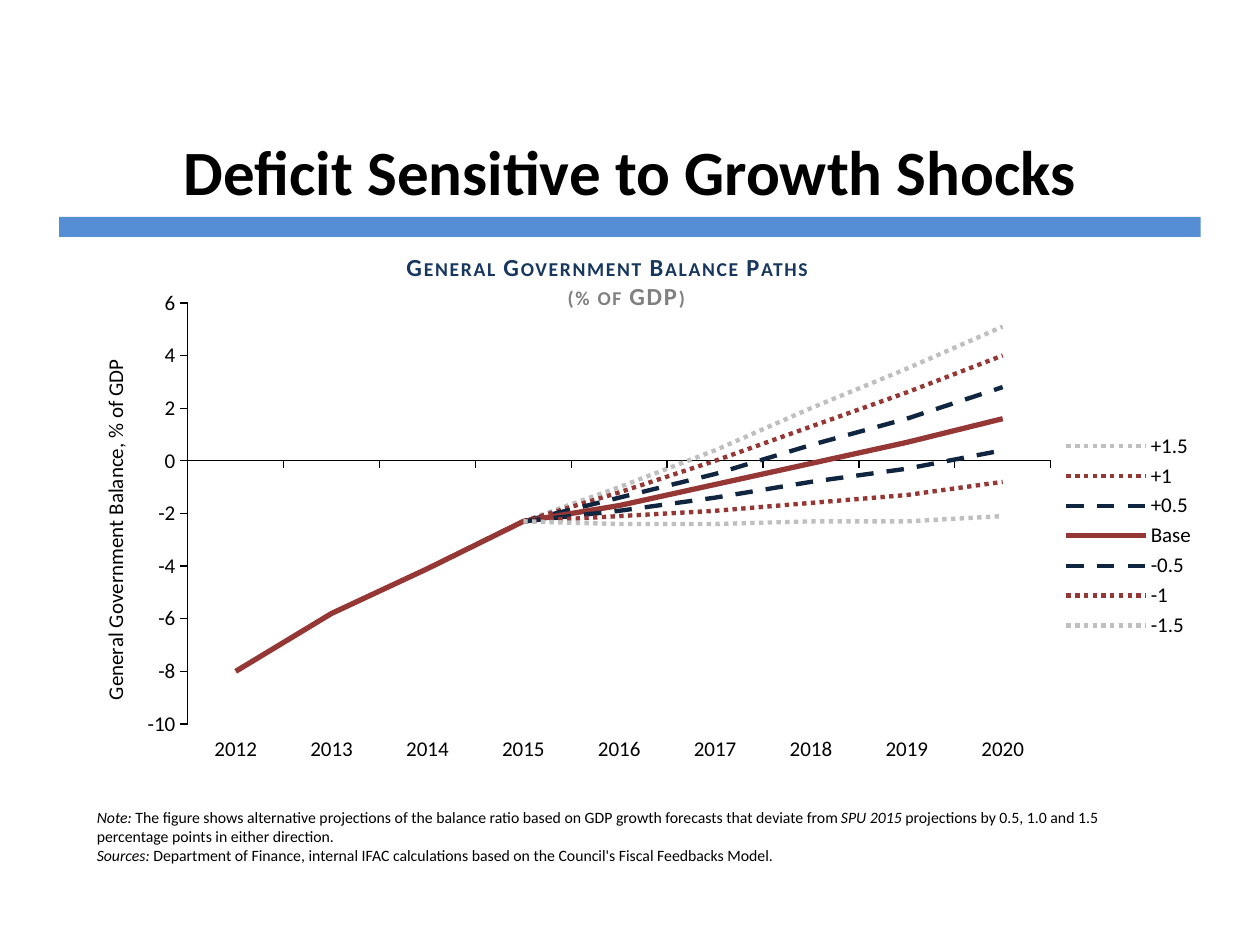
from lxml import etree
from pptx import Presentation
from pptx.chart.data import CategoryChartData
from pptx.dml.color import RGBColor
from pptx.enum.chart import XL_CHART_TYPE as CT, XL_LEGEND_POSITION as LP
from pptx.enum.chart import XL_TICK_LABEL_POSITION as TLP, XL_TICK_MARK as TM
from pptx.enum.dml import MSO_LINE_DASH_STYLE as DASH
from pptx.enum.shapes import MSO_SHAPE
from pptx.enum.text import PP_ALIGN
from pptx.oxml.ns import qn
from pptx.util import Inches, Pt

FONT = "Calibri"
COLORS = {"black": "000000", "bar": "558ED5", "heading": "17375E", "unit": "808080",
          "outer": "BFBFBF", "middle": "953735", "inner": "10253F"}
YEARS = [str(year) for year in range(2012, 2021)]
PATHS = [
    ("+1.5", [-2.3, -1, 0.4, 2, 3.5, 5.1], "outer", DASH.ROUND_DOT),
    ("+1", [-2.3, -1.2, 0, 1.3, 2.6, 4], "middle", DASH.ROUND_DOT),
    ("+0.5", [-2.3, -1.4, -0.5, 0.6, 1.6, 2.8], "inner", DASH.DASH),
    ("Base", [-8, -5.8, -4.1, -2.3, -1.7, -0.9, -0.1, 0.7, 1.6], "middle", None),
    ("-0.5", [-2.3, -1.9, -1.4, -0.8, -0.3, 0.4], "inner", DASH.DASH),
    ("-1", [-2.3, -2.1, -1.9, -1.6, -1.3, -0.8], "middle", DASH.ROUND_DOT),
    ("-1.5", [-2.3, -2.4, -2.4, -2.3, -2.3, -2.1], "outer", DASH.ROUND_DOT),
]


def rgb(name):
    """Return the named colour."""
    return RGBColor.from_string(COLORS[name])


def set_font(font, size, color="black", bold=False, italic=False):
    """Set the face, size, colour and style of a font."""
    font.name, font.size, font.bold, font.italic = FONT, Pt(size), bold, italic
    font.color.rgb = rgb(color)


def add_text(s, box, paragraphs, size, align=PP_ALIGN.LEFT, small_caps=False):
    """Add a text box from paragraphs of (text, colour, bold, italic) runs."""
    tf = s.shapes.add_textbox(*map(Inches, box)).text_frame
    tf.word_wrap = True
    for i, runs in enumerate(paragraphs):
        p = tf.add_paragraph() if i else tf.paragraphs[0]
        p.alignment = align
        for text, *style in runs:
            r = p.add_run()
            r.text = text
            set_font(r.font, size, *style)
            if small_caps:
                r.font._element.set("cap", "small")
                r.font._element.set("spc", "100")


def set_layout(parent, after, **places):
    """Place a chart part by fractions of the chart area."""
    for old in parent.findall(qn("c:layout")):
        parent.remove(old)
    layout = etree.Element(qn("c:layout"))
    manual = etree.SubElement(layout, qn("c:manualLayout"))
    for tag, value in places.items():
        etree.SubElement(manual, qn(f"c:{tag}")).set("val", str(value))
    parent.insert(after, layout)


def add_header(s, left, top, width):
    """Draw the slide title and the bar below it."""
    bar = s.shapes.add_shape(MSO_SHAPE.RECTANGLE, Inches(left), Inches(top + 0.72),
                             Inches(width), Inches(0.16))
    bar.shadow.inherit = False
    bar.fill.solid()
    bar.fill.fore_color.rgb = rgb("bar")
    bar.line.fill.background()
    add_text(s, (left + 0.03, top, width - 0.06, 0.63),
             [[("Deficit Sensitive to Growth Shocks", "black", True)]], 36, PP_ALIGN.CENTER)


def format_axis(axis):
    """Give an axis a thin black line, outer ticks and low labels."""
    axis.has_major_gridlines = False
    axis.major_tick_mark, axis.minor_tick_mark = TM.OUTSIDE, TM.NONE
    axis.tick_label_position = TLP.LOW
    axis.format.line.color.rgb = rgb("black")
    axis.format.line.width = Pt(0.75)
    set_font(axis.tick_labels.font, 12)


def add_balance_chart(s, left, top, width, height):
    """Draw the balance paths with their heading."""
    data = CategoryChartData()
    data.categories = YEARS
    for name, values, *_ in PATHS:
        data.add_series(name, [None] * (len(YEARS) - len(values)) + values)
    chart = s.shapes.add_chart(CT.LINE, Inches(left), Inches(top), Inches(width),
                               Inches(height), data).chart
    chart.has_title = False
    set_font(chart.font, 10)
    plot = chart.plots[0]
    plot.vary_by_categories = False
    for series, (_, _, color, dash) in zip(plot.series, PATHS):
        series.smooth = False
        line = series.format.line
        line.color.rgb = rgb(color)
        line.width = Pt(2.5 if dash else 3)
        if dash:
            line.dash_style = dash

    for axis in (chart.category_axis, chart.value_axis):
        format_axis(axis)
    axis = chart.value_axis
    axis.minimum_scale, axis.maximum_scale, axis.major_unit = -10, 6, 2
    axis.tick_labels.number_format = "General"
    axis.tick_labels.number_format_is_linked = False
    r = axis.axis_title.text_frame.paragraphs[0].add_run()
    r.text = "General Government Balance, % of GDP"
    set_font(r.font, 12)
    set_layout(axis.axis_title._element, 1, xMode="edge", yMode="edge", x=0.02, y=0.2)

    chart.has_legend = True
    chart.legend.position = LP.RIGHT
    chart.legend.include_in_layout = False
    set_font(chart.legend.font, 12)
    set_layout(chart._chartSpace.chart.plotArea, 0, layoutTarget="inner", xMode="edge",
               yMode="edge", x=0.1, y=0.112, w=0.761, h=0.702)
    add_text(s, (left + 1.42, top + 0.08, 6.06, 0.57),
             [[("General Government Balance Paths", "heading", True)],
              [("(% of GDP)", "unit", True)]], 14, PP_ALIGN.CENTER, small_caps=True)


def add_notes(s, *box):
    """Write the note and the sources under the chart."""
    note = [("Note: ", "black", False, True),
            ("The figure shows alternative projections of the balance ratio based on GDP "
             "growth forecasts that deviate from ",),
            ("SPU 2015 ", "black", False, True),
            ("projections by 0.5, 1.0 and 1.5 percentage points in either direction.",)]
    sources = [("Sources: ", "black", False, True),
               ("Department of Finance, internal IFAC calculations based on the Council's "
                "Fiscal Feedbacks Model.",)]
    add_text(s, box, [note, sources], 9)


def main():
    """Build and save the slide."""
    prs = Presentation()
    prs.slide_width, prs.slide_height = Inches(10), Inches(7.52)
    s = prs.slides.add_slide(prs.slide_layouts[6])
    add_header(s, 0.47, 1, 9.06)
    add_balance_chart(s, 0.59, 1.87, 9, 4.76)
    add_notes(s, 0.67, 6.36, 8.47, 0.6)
    prs.save("out.pptx")


if __name__ == "__main__":
    main()
